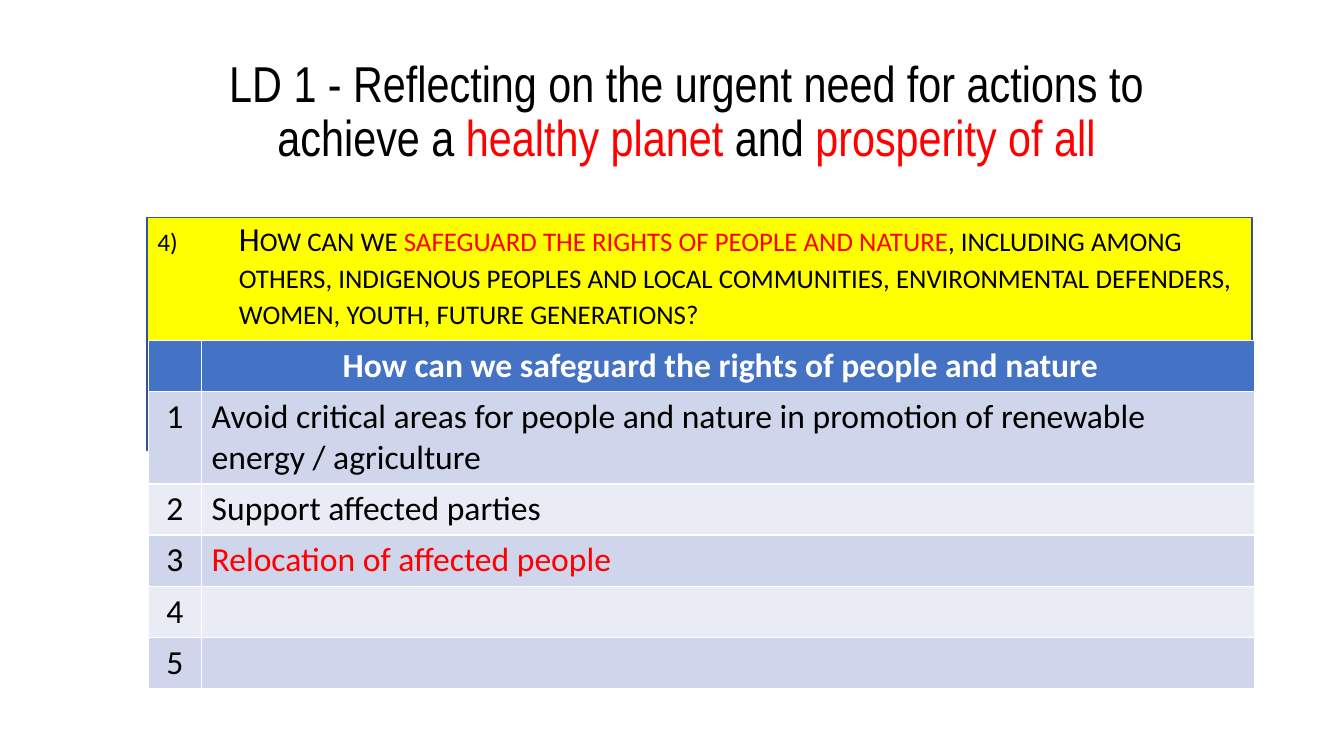
from lxml.etree import SubElement
from pptx import Presentation
from pptx.dml.color import RGBColor
from pptx.enum.shapes import MSO_SHAPE
from pptx.enum.text import MSO_ANCHOR, MSO_AUTO_SIZE, PP_ALIGN
from pptx.oxml.ns import qn
from pptx.util import Inches, Pt

BLACK = RGBColor(0, 0, 0)
RED = RGBColor(255, 0, 0)
WHITE = RGBColor(255, 255, 255)
YELLOW = RGBColor(255, 255, 0)
NAVY = RGBColor(0x32, 0x54, 0x91)
BLUE = RGBColor(0x44, 0x72, 0xC4)
BANDS = [RGBColor(0xE9, 0xEB, 0xF5), RGBColor(0xCF, 0xD5, 0xEA)]

TITLE = [
    ("LD 1 - Reflecting on the urgent need for actions to achieve a ", BLACK),
    ("healthy planet", RED),
    (" and ", BLACK),
    ("prosperity of all", RED),
]
QUESTION = [
    ("How can we ", BLACK),
    ("safeguard the rights of people and nature", RED),
    (", including among others, indigenous peoples and local communities, "
     "environmental defenders, women, youth, future generations?", BLACK),
]
HEADER = "How can we safeguard the rights of people and nature"
ANSWERS = [
    ("Avoid critical areas for people and nature in promotion of "
     "renewable energy / agriculture", BLACK),
    ("Support affected parties", BLACK),
    ("Relocation of affected people", RED),
    ("", BLACK),
    ("", BLACK),
]
COLS = [0.53, 10.44]
ROWS = [0.5, 0.9, 0.5, 0.5, 0.5, 0.5]


def place(shape, left, top, width, height):
    """Move and size a shape in inches."""
    shape.left, shape.top = Inches(left), Inches(top)
    shape.width, shape.height = Inches(width), Inches(height)


def write(para, runs, size, face, bold=False):
    """Add coloured runs to a paragraph and return them."""
    made = []
    for text, color in runs:
        run = para.add_run()
        run.text = text
        run.font.size = Pt(size)
        run.font.name = face
        run.font.bold = bold
        run.font.color.rgb = color
        made.append(run)
    return made


def add_title(slide):
    """Fill the title placeholder."""
    title = slide.shapes.title
    place(title, 1.46, 0.4, 10.7, 1.45)
    frame = title.text_frame
    frame.auto_size = MSO_AUTO_SIZE.NONE
    frame.vertical_anchor = MSO_ANCHOR.MIDDLE
    para = frame.paragraphs[0]
    para.alignment = PP_ALIGN.CENTER
    para.line_spacing = 0.9
    write(para, TITLE, 36, "Arial Narrow")


def add_question(slide):
    """Fill the body placeholder with the numbered question."""
    body = slide.placeholders[1]
    place(body, 1.46, 2.16, 10.96, 5.33)
    frame = body.text_frame
    frame.auto_size = MSO_AUTO_SIZE.NONE
    para = frame.paragraphs[0]
    para.line_spacing = 0.9
    para.space_before = Pt(10)
    for run in write(para, QUESTION, 24, "Calibri"):
        run.font._element.set("cap", "small")
    props = para._p.get_or_add_pPr()
    props.set("marL", str(Inches(0.81)))
    props.set("indent", str(-Inches(0.81)))
    SubElement(props, qn("a:buSzPct"), val="75000")
    SubElement(props, qn("a:buFont"), typeface="Calibri")
    SubElement(props, qn("a:buAutoNum"), type="arabicParenR", startAt="4")


def add_panel(slide):
    """Put the yellow panel behind the question."""
    panel = slide.shapes.add_shape(
        MSO_SHAPE.RECTANGLE, Inches(1.46), Inches(2.16), Inches(10.96), Inches(2.31))
    panel.shadow.inherit = False
    panel.fill.solid()
    panel.fill.fore_color.rgb = YELLOW
    panel.line.color.rgb = NAVY
    panel.line.width = Pt(1)
    slide.shapes._spTree.insert(2, panel._element)


def add_answers(slide):
    """Build the banded table of answers."""
    table = slide.shapes.add_table(
        len(ROWS), len(COLS), Inches(1.47), Inches(3.38),
        Inches(sum(COLS)), Inches(sum(ROWS))).table
    for col, width in zip(table.columns, COLS):
        col.width = Inches(width)
    for row, height in zip(table.rows, ROWS):
        row.height = Inches(height)
    lines = [("", (HEADER, WHITE))]
    lines += [(str(num), item) for num, item in enumerate(ANSWERS, 1)]
    for pos, (num, item) in enumerate(lines):
        head = pos == 0
        for col, (text, color) in enumerate([(num, BLACK), item]):
            cell = table.cell(pos, col)
            cell.fill.solid()
            cell.fill.fore_color.rgb = BLUE if head else BANDS[pos % 2]
            para = cell.text_frame.paragraphs[0]
            para.font.size = Pt(24)
            if head or col == 0:
                para.alignment = PP_ALIGN.CENTER
            if text:
                write(para, [(text, color)], 24, "Calibri", head)
    table.cell(0, 1).margin_right = Inches(0.25)


def main():
    """Build and save the slide."""
    deck = Presentation()
    deck.slide_width, deck.slide_height = Inches(13.33), Inches(7.5)
    slide = deck.slides.add_slide(deck.slide_layouts[1])
    add_question(slide)
    add_title(slide)
    slide.shapes._spTree.append(slide.shapes.title._element)
    add_panel(slide)
    add_answers(slide)
    deck.save("out.pptx")


if __name__ == "__main__":
    main()
